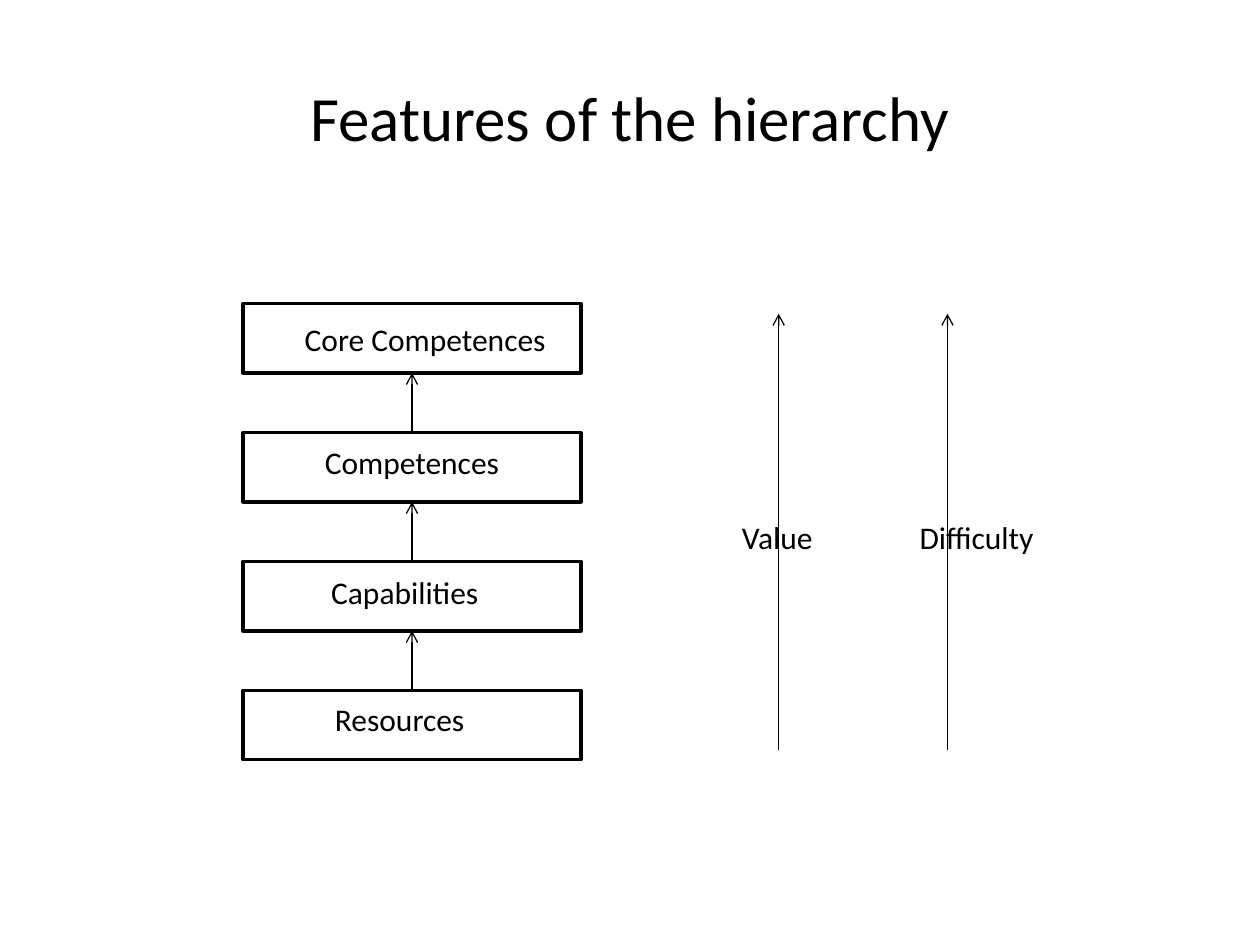
from lxml import etree
from pptx import Presentation
from pptx.dml.color import RGBColor
from pptx.enum.shapes import MSO_CONNECTOR, MSO_SHAPE
from pptx.enum.text import MSO_ANCHOR, MSO_AUTO_SIZE, PP_ALIGN
from pptx.oxml.ns import qn
from pptx.util import Inches, Pt

RECTANGLE = MSO_SHAPE.RECTANGLE
STRAIGHT = MSO_CONNECTOR.STRAIGHT
MIDDLE = MSO_ANCHOR.MIDDLE
CENTER = PP_ALIGN.CENTER
FIT_SHAPE = MSO_AUTO_SIZE.SHAPE_TO_FIT_TEXT
TOP_SIDE, BOTTOM_SIDE = 0, 2

FONT = "Calibri"
BLACK = "000000"
WHITE = "FFFFFF"

# Label, then the label's left and top offset within its level, and its width
LEVELS = [
    ("Core Competences", 0.39, 0.08, 2.6),
    ("Competences", 0.55, 0.03, 1.97),
    ("Capabilities", 0.6, 0.04, 1.5),
    ("Resources", 0.63, 0.03, 1.5),
]
# Label, arrow position and label position, from the left of the scales
SCALES = [("Value", 0.39, 0), ("Difficulty", 1.73, 1.41)]


def color(hex_string):
    return RGBColor.from_string(hex_string)


def add_text(slide, text, left, top, width, height, size):
    label = slide.shapes.add_textbox(
        Inches(left), Inches(top), Inches(width), Inches(height))
    frame = label.text_frame
    frame.word_wrap = True
    frame.text = text
    font = frame.paragraphs[0].runs[0].font
    font.name, font.size = FONT, Pt(size)
    font.color.rgb = color(BLACK)
    return frame


def add_label(slide, text, left, top, width):
    add_text(slide, text, left, top, width, 0.4, 18).auto_size = FIT_SHAPE


def add_arrow(slide, x, start_y, end_y):
    arrow = slide.shapes.add_connector(
        STRAIGHT, Inches(x), Inches(start_y), Inches(x), Inches(end_y))
    arrow.line.color.rgb = color(BLACK)
    arrow.line.width = Pt(0.75)
    etree.SubElement(arrow.line._get_or_add_ln(), qn("a:tailEnd"), type="arrow")
    etree.SubElement(arrow._element.spPr, qn("a:effectLst"))
    return arrow


def add_title(slide, left, top, width, height):
    frame = add_text(slide, "Features of the hierarchy",
                     left, top, width, height, 36)
    frame.vertical_anchor = MIDDLE
    frame.paragraphs[0].alignment = CENTER


def add_hierarchy(slide, left, top, width, height):
    """Stack the levels and point each one to the level above it."""
    level_height = 0.55
    pitch = (height - level_height) / (len(LEVELS) - 1)
    upper_level = None
    for index, (text, label_x, label_y, label_width) in enumerate(LEVELS):
        y = top + index * pitch
        level = slide.shapes.add_shape(
            RECTANGLE, Inches(left), Inches(y),
            Inches(width), Inches(level_height))
        level.shadow.inherit = False
        level.fill.solid()
        level.fill.fore_color.rgb = color(WHITE)
        level.line.color.rgb = color(BLACK)
        level.line.width = Pt(2)
        if upper_level is not None:
            arrow = add_arrow(slide, left + width / 2, y,
                              y - pitch + level_height)
            arrow.begin_connect(level, TOP_SIDE)
            arrow.end_connect(upper_level, BOTTOM_SIDE)
        add_label(slide, text, left + label_x, y + label_y, label_width)
        upper_level = level


def add_scales(slide, left, top, height):
    """Draw the rising arrows, each with its label across it."""
    for text, arrow_x, label_x in SCALES:
        add_arrow(slide, left + arrow_x, top + height, top)
        add_label(slide, text, left + label_x, top + 1.57, 2.28)


def main():
    presentation = Presentation()
    presentation.slide_width = Inches(10)
    presentation.slide_height = Inches(7.5)
    slide = presentation.slides.add_slide(presentation.slide_layouts[6])
    add_title(slide, 0.5, 0.3, 9, 1.25)
    add_hierarchy(slide, 1.93, 2.41, 2.68, 3.62)
    add_scales(slide, 5.79, 2.49, 3.46)
    presentation.save("out.pptx")


if __name__ == "__main__":
    main()
